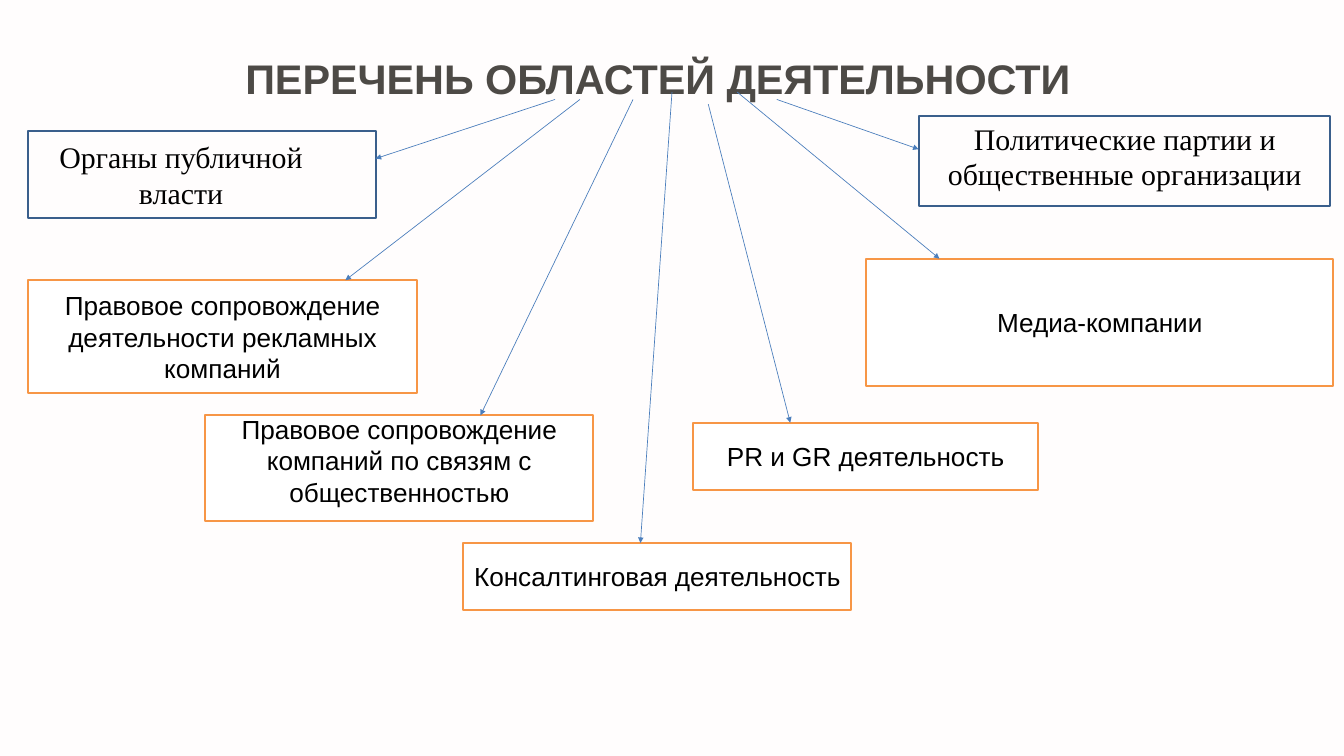
"""Build a slide that maps the fields of activity."""
import dataclasses
import typing

import lxml.etree
import pptx
import pptx.dml.color
import pptx.enum.shapes
import pptx.enum.text
import pptx.oxml.ns
import pptx.util

SCALE = 9144
COLORS = {
    "back": "FFFDFD",
    "title": "4D4A46",
    "text": "000000",
    "fill": "FFFFFF",
    "edge": "F79646",
    "frame": "3A5F8C",
    "arrow": "4B7EBC",
}


@dataclasses.dataclass(frozen=True)
class Box:
    left: int
    top: int
    width: int
    height: int
    text: str = ""
    lift: bool = False


@dataclasses.dataclass(frozen=True)
class Arrow:
    x: int
    y: int
    to_x: int
    to_y: int


TITLE = Box(365, 55, 1599, 99, "ПЕРЕЧЕНЬ ОБЛАСТЕЙ ДЕЯТЕЛЬНОСТИ")
FIELDS = [
    Box(42, 417, 578, 168, "Правовое сопровождение деятельности рекламных компаний"),
    Box(1289, 385, 695, 190, "Медиа-компании"),
    Box(305, 618, 578, 158,
        "Правовое сопровождение компаний по связям с общественностью", True),
    Box(689, 808, 578, 100, "Консалтинговая деятельность"),
    Box(1031, 629, 514, 100, "PR и GR деятельность"),
]
FRAMES = [Box(42, 195, 517, 130), Box(1367, 172, 612, 135)]
LABELS = [
    Box(1384, 174, 580, 118, "Политические партии и общественные организации"),
    Box(62, 202, 415, 118, "Органы публичной власти"),
]
ARROWS = [
    Arrow(863, 148, 514, 417),
    Arrow(1097, 137, 1398, 385),
    Arrow(942, 148, 715, 618),
    Arrow(1000, 137, 953, 808),
    Arrow(1054, 155, 1176, 629),
    Arrow(826, 148, 559, 236),
    Arrow(1156, 148, 1367, 222),
]


def emu(*px: int) -> list[pptx.util.Emu]:
    return [pptx.util.Emu(n * SCALE) for n in px]


def color(name: str) -> pptx.dml.color.RGBColor:
    return pptx.dml.color.RGBColor.from_string(COLORS[name])


def place(box: Box) -> list[pptx.util.Emu]:
    return emu(box.left, box.top, box.width, box.height)


def write(shape: typing.Any, text: str, face: str, size: float, ink: str = "text") -> typing.Any:
    frame = shape.text_frame
    frame.word_wrap = True
    line = frame.paragraphs[0]
    line.text = text
    line.alignment = pptx.enum.text.PP_ALIGN.CENTER
    line.font.name = face
    line.font.size = pptx.util.Pt(size)
    line.font.color.rgb = color(ink)
    return line


def draw_title(slide: typing.Any, box: Box) -> None:
    shape = slide.shapes.add_textbox(*place(box))
    line = write(shape, box.text, "Arial", 44.3, "title")
    line.alignment = pptx.enum.text.PP_ALIGN.LEFT
    line.line_spacing = 1.33
    line.font.bold = True
    frame = shape.text_frame
    frame.margin_left = frame.margin_right = frame.margin_top = frame.margin_bottom = 0
    frame.auto_size = pptx.enum.text.MSO_AUTO_SIZE.SHAPE_TO_FIT_TEXT


def draw_rect(slide: typing.Any, box: Box, edge: str) -> typing.Any:
    shape = slide.shapes.add_shape(pptx.enum.shapes.MSO_SHAPE.RECTANGLE, *place(box))
    shape.shadow.inherit = False
    shape.fill.background()
    shape.line.color.rgb = color(edge)
    shape.line.width = pptx.util.Pt(2)
    return shape


def draw_field(slide: typing.Any, box: Box) -> None:
    shape = draw_rect(slide, box, "edge")
    shape.fill.solid()
    shape.fill.fore_color.rgb = color("fill")
    write(shape, box.text, "Arial", 28)
    frame = shape.text_frame
    frame.vertical_anchor = pptx.enum.text.MSO_ANCHOR.MIDDLE
    if box.lift:
        frame.margin_top, frame.margin_bottom = emu(0, 24)


def draw_label(slide: typing.Any, box: Box) -> None:
    shape = slide.shapes.add_textbox(*place(box))
    write(shape, box.text, "Times New Roman", 32)
    shape.text_frame.auto_size = pptx.enum.text.MSO_AUTO_SIZE.SHAPE_TO_FIT_TEXT


def draw_arrow(slide: typing.Any, arrow: Arrow) -> None:
    link = slide.shapes.add_connector(
        pptx.enum.shapes.MSO_CONNECTOR.STRAIGHT,
        *emu(arrow.x, arrow.y, arrow.to_x, arrow.to_y))
    link.line.color.rgb = color("arrow")
    link.line.width = pptx.util.Pt(0.75)
    name = pptx.oxml.ns.qn
    props = link.element.find(name("p:spPr"))
    lxml.etree.SubElement(props.find(name("a:ln")), name("a:tailEnd"), type="triangle")
    lxml.etree.SubElement(props, name("a:effectLst"))


def main() -> None:
    deck = pptx.Presentation()
    deck.slide_width, deck.slide_height = emu(2000, 1125)
    slide = deck.slides.add_slide(deck.slide_layouts[6])
    slide.background.fill.solid()
    slide.background.fill.fore_color.rgb = color("back")
    draw_title(slide, TITLE)
    for box in FIELDS:
        draw_field(slide, box)
    for box in FRAMES:
        draw_rect(slide, box, "frame")
    for arrow in ARROWS:
        draw_arrow(slide, arrow)
    for box in LABELS:
        draw_label(slide, box)
    deck.save("out.pptx")


if __name__ == "__main__":
    main()
